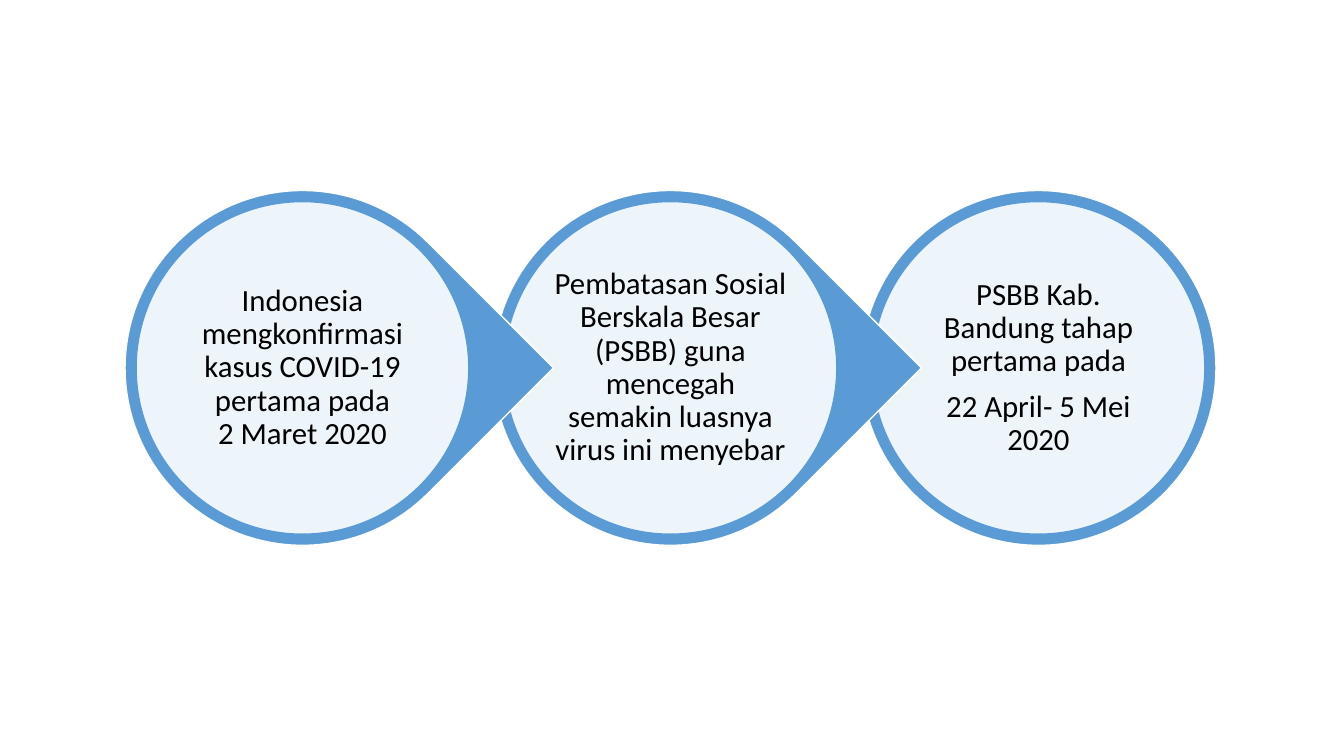
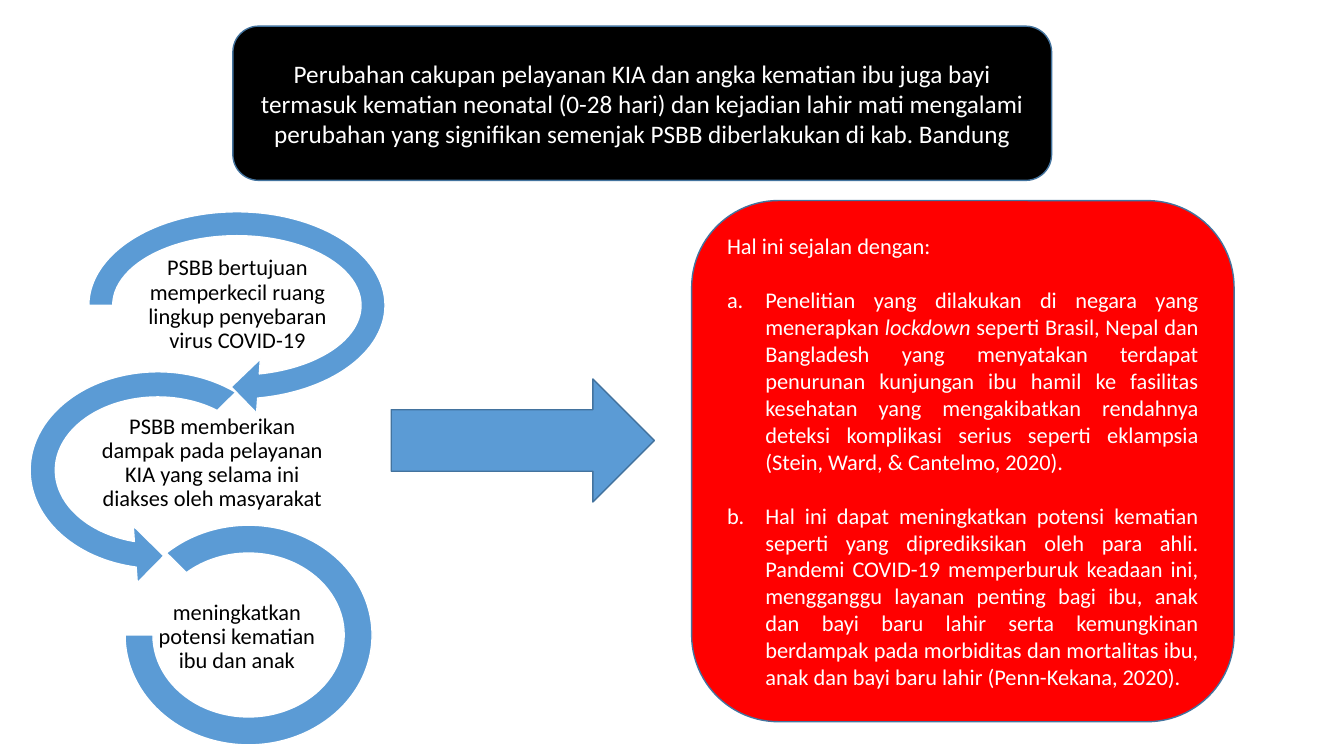
from lxml.etree import SubElement
from pptx import Presentation
from pptx.dml.color import RGBColor
from pptx.enum.shapes import MSO_SHAPE as Preset
from pptx.enum.text import MSO_ANCHOR, PP_ALIGN
from pptx.oxml.ns import qn
from pptx.util import Inches, Pt

BLUE = RGBColor(0x5B, 0x9B, 0xD5)
DARK_BLUE = RGBColor(0x43, 0x73, 0x9E)
WHITE = RGBColor(0xFF, 0xFF, 0xFF)
BLACK = RGBColor(0, 0, 0)
RED = RGBColor(0xFF, 0, 0)
FONT = "Calibri"

# A text is a list of paragraphs, a paragraph a list of (words, italic) runs.
# "\v" inside the words is a line break.
TIMELINE = [
    [[("Indonesia mengkonfirmasi kasus COVID-19 pertama pada\v2 Maret 2020", False)]],
    [[("Pembatasan Sosial Berskala Besar (PSBB) guna mencegah semakin luasnya "
       "virus ini menyebar", False)]],
    [[("PSBB Kab. Bandung tahap pertama pada", False)],
     [("22 April- 5 Mei 2020", False)]],
]

HEADLINE = [[("Perubahan cakupan pelayanan KIA dan angka kematian ibu juga bayi termasuk "
              "kematian neonatal (0-28 hari) dan kejadian lahir mati mengalami perubahan "
              "yang signifikan semenjak PSBB diberlakukan di kab. Bandung", False)]]

# preset, arrow place, adjustments, label place, label
IMPACT_STEPS = [
    (Preset.CIRCULAR_ARROW, (0.73, 1.95, 3.24, 2.16), (0.11, 11.42, 45, 108, 0.125),
     (1.24, 2.63, 2.23, 0.79),
     "PSBB bertujuan memperkecil ruang lingkup penyebaran virus COVID-19"),
    (Preset.LEFT_CIRCULAR_ARROW, (0.14, 3.53, 2.85, 2.27), (0.11, 11.42, 63, 189, 0.125),
     (0.91, 4.2, 2.39, 0.79),
     "PSBB memberikan dampak pada pelayanan KIA yang selama ini diakses oleh masyarakat"),
    (Preset.BLOCK_ARC, (1.24, 5.21, 2.45, 2.18), (135, 108, 0.127),
     (1.56, 5.93, 1.58, 0.79),
     "meningkatkan potensi kematian ibu dan anak"),
]

EVIDENCE = [
    [("Hal ini sejalan dengan:", False)],
    [("Penelitian yang dilakukan di negara yang menerapkan ", False),
     ("lockdown ", True),
     ("seperti Brasil, Nepal dan Bangladesh yang menyatakan terdapat penurunan kunjungan "
      "ibu hamil ke fasilitas kesehatan yang mengakibatkan rendahnya deteksi komplikasi "
      "serius seperti eklampsia (Stein, Ward, & Cantelmo, 2020).", False)],
    [("Hal ini dapat meningkatkan potensi kematian seperti yang diprediksikan oleh para "
      "ahli. Pandemi COVID-19 memperburuk keadaan ini, mengganggu layanan penting bagi "
      "ibu, anak dan bayi baru lahir serta kemungkinan berdampak pada morbiditas dan "
      "mortalitas ibu, anak dan bayi baru lahir (Penn-Kekana, 2020).", False)],
]


def add_preset(slide, preset, place, fill, line, adjustments=()):
    shape = slide.shapes.add_shape(preset, *map(Inches, place))
    shape.shadow.inherit = False
    shape.fill.solid()
    shape.fill.fore_color.rgb = fill
    shape.line.color.rgb = line
    shape.line.width = Pt(1)
    for index, value in enumerate(adjustments):
        shape.adjustments[index] = value
    return shape


def write(shape, paragraphs, size, color, align=PP_ALIGN.CENTER, inset=None,
          line_spacing=None, gap=0):
    """Fill the shape with text; gap is the space in points between paragraphs."""
    frame = shape.text_frame
    frame.word_wrap = True
    frame.vertical_anchor = MSO_ANCHOR.MIDDLE
    if inset is not None:
        frame.margin_left = frame.margin_right = Inches(inset)
        frame.margin_top = frame.margin_bottom = Inches(inset)
    for index, runs in enumerate(paragraphs):
        paragraph = frame.add_paragraph() if index else frame.paragraphs[0]
        paragraph.alignment = align
        paragraph.space_before = Pt(gap if index else 0)
        if line_spacing:
            paragraph.line_spacing = line_spacing
        for words, italic in runs:
            for row, part in enumerate(words.split("\v")):
                if row:
                    paragraph.add_line_break()
                run = paragraph.add_run()
                run.text = part
                run.font.name = FONT
                run.font.size = Pt(size)
                run.font.color.rgb = color
                run.font.italic = italic


def set_opacity(shape, percent):
    color = shape.fill._xPr.find(qn("a:solidFill"))[0]
    SubElement(color, qn("a:alpha")).set("val", str(percent * 1000))


def letter_item(paragraph, indent):
    properties = paragraph._p.get_or_add_pPr()
    properties.set("marL", str(Inches(indent)))
    properties.set("indent", str(-Inches(indent)))
    SubElement(properties, qn("a:buFont")).set("typeface", FONT)
    SubElement(properties, qn("a:buAutoNum")).set("type", "alphaLcPeriod")


def build_timeline(slide):
    left, top, pitch, outer, inner = 1.24, 1.89, 3.65, 3.52, 3.3
    rim = (outer - inner) / 2
    last = len(TIMELINE) - 1
    # From right to left, so that each tip lies over the next circle
    for index in range(last, -1, -1):
        x = left + index * pitch
        place = (x, top, outer, outer)
        if index == last:
            add_preset(slide, Preset.OVAL, place, BLUE, WHITE)
        else:
            add_preset(slide, Preset.TEAR, place, BLUE, WHITE, (1,)).rotation = 45
        disc = add_preset(slide, Preset.OVAL, (x + rim, top + rim, inner, inner), WHITE, BLUE)
        set_opacity(disc, 90)
        write(disc, TIMELINE[index], 22, BLACK, inset=0.01, line_spacing=0.9, gap=8.5)


def build_impact(slide):
    headline = add_preset(slide, Preset.ROUNDED_RECTANGLE, (2.31, 0.26, 8.12, 1.53),
                          BLACK, DARK_BLUE)
    write(headline, HEADLINE, 18, WHITE)

    for preset, arrow_place, adjustments, label_place, words in IMPACT_STEPS:
        add_preset(slide, preset, arrow_place, BLUE, WHITE, adjustments)
        label = slide.shapes.add_textbox(*map(Inches, label_place))
        write(label, [[(words, False)]], 16, BLACK, inset=0.01, line_spacing=0.9)

    add_preset(slide, Preset.RIGHT_ARROW, (3.88, 3.76, 2.61, 1.22), BLUE, DARK_BLUE)

    evidence = add_preset(slide, Preset.ROUNDED_RECTANGLE, (6.86, 1.99, 5.38, 5.17),
                          RED, DARK_BLUE)
    write(evidence, EVIDENCE, 16, WHITE, PP_ALIGN.JUSTIFY, gap=19.5)
    for paragraph in evidence.text_frame.paragraphs[1:]:
        letter_item(paragraph, 0.38)


def main():
    deck = Presentation()
    deck.slide_width, deck.slide_height = Inches(13.33), Inches(7.5)
    blank = deck.slide_layouts[6]
    for build in (build_timeline, build_impact):
        build(deck.slides.add_slide(blank))
    deck.save("out.pptx")


if __name__ == "__main__":
    main()
